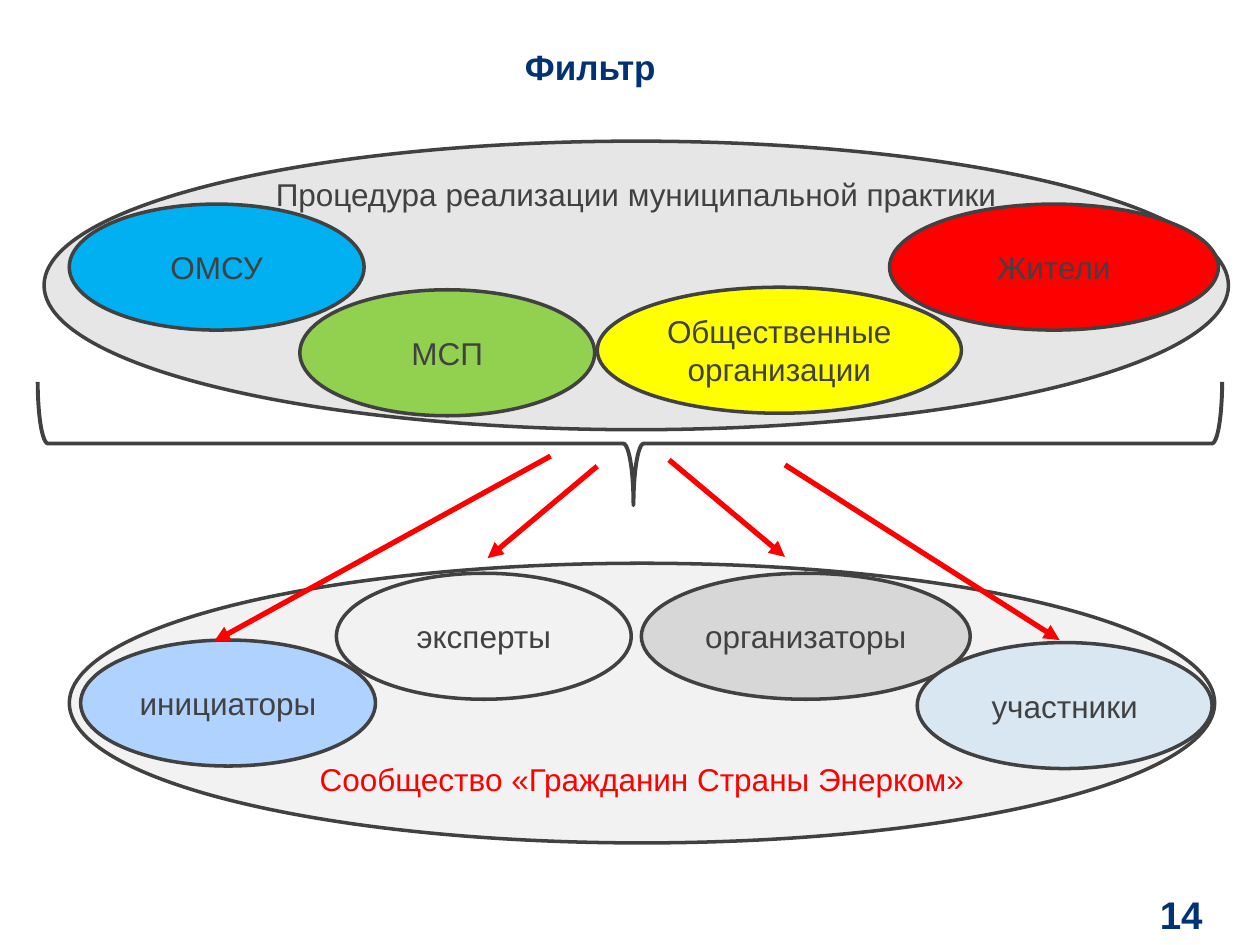
from typing import NamedTuple

from lxml import etree
from pptx import Presentation
from pptx.dml.color import RGBColor
from pptx.enum import shapes, text
from pptx.oxml import ns
from pptx.util import Inches, Pt

FONT = "Arial"
INK = RGBColor(0x41, 0x41, 0x42)
NAVY = RGBColor(0x00, 0x32, 0x74)
RED = RGBColor(0xFF, 0x00, 0x00)
GREY = RGBColor(0xE6, 0xE6, 0xE6)
PALE_GREY = RGBColor(0xF2, 0xF2, 0xF2)
MID_GREY = RGBColor(0xD7, 0xD7, 0xD7)
LIGHT_BLUE = RGBColor(0xB0, 0xD2, 0xFF)
PALE_BLUE = RGBColor(0xD8, 0xE7, 0xF2)
BLUE = RGBColor(0x00, 0xB0, 0xF0)
GREEN = RGBColor(0x92, 0xD0, 0x50)
YELLOW = RGBColor(0xFF, 0xFF, 0x00)

MIDDLE = text.MSO_ANCHOR.MIDDLE


class Oval(NamedTuple):
    label: str
    left: float
    top: float
    width: float
    fill: RGBColor
    height: float = 1
    color: RGBColor = INK
    anchor: text.MSO_ANCHOR = MIDDLE
    inset: float = 0.05


class Arrow(NamedTuple):
    x1: float
    y1: float
    x2: float
    y2: float


class Label(NamedTuple):
    words: str
    left: float
    top: float
    width: float
    height: float
    size: int


OVALS = [
    Oval("Процедура реализации муниципальной практики", 0.35, 1.12, 9.4, GREY,
         2.29, INK, text.MSO_ANCHOR.TOP, -0.07),
    Oval("Сообщество «Гражданин Страны Энерком»", 0.55, 4.47, 9.09, PALE_GREY,
         2.22, RED, text.MSO_ANCHOR.BOTTOM, 0.03),
    Oval("инициаторы", 0.64, 5.08, 2.34, LIGHT_BLUE),
    Oval("организаторы", 5.09, 4.55, 2.61, MID_GREY),
    Oval("эксперты", 2.67, 4.55, 2.34, PALE_GREY),
    Oval("участники", 7.28, 5.1, 2.34, PALE_BLUE),
    Oval("ОМСУ", 0.55, 1.62, 2.34, BLUE),
    Oval("Жители", 7.06, 1.62, 2.61, RED),
    Oval("МСП", 2.38, 2.3, 2.34, GREEN),
    Oval("Общественные организации", 4.74, 2.28, 2.89, YELLOW),
]

ARROWS = [
    Arrow(4.37, 3.62, 1.7, 5.09),
    Arrow(4.74, 3.7, 3.87, 4.43),
    Arrow(5.31, 3.65, 6.23, 4.42),
    Arrow(6.23, 3.69, 8.41, 5.08),
]

LABELS = [
    Label("Фильтр", 0.51, 0, 8.35, 1.05, 20),
    Label("14", 9.03, 7.05, 0.69, 0.41, 22),
]


def write(tf, words: str, size: int, color: RGBColor, bold: bool = False) -> None:
    tf.word_wrap = True
    p = tf.paragraphs[0]
    p.text = words
    p.alignment = text.PP_ALIGN.CENTER
    p.font.name = FONT
    p.font.size = Pt(size)
    p.font.bold = bold
    p.font.color.rgb = color


def add_oval(s, oval: Oval) -> None:
    sp = s.shapes.add_shape(
        shapes.MSO_SHAPE.OVAL, Inches(oval.left), Inches(oval.top),
        Inches(oval.width), Inches(oval.height))
    sp.shadow.inherit = False
    sp.fill.solid()
    sp.fill.fore_color.rgb = oval.fill
    sp.line.color.rgb = INK
    sp.line.width = Pt(2)
    tf = sp.text_frame
    tf.vertical_anchor = oval.anchor
    tf.margin_top = tf.margin_bottom = Inches(oval.inset)
    write(tf, oval.label, 18, oval.color)


def add_label(s, label: Label) -> None:
    sp = s.shapes.add_textbox(
        Inches(label.left), Inches(label.top),
        Inches(label.width), Inches(label.height))
    tf = sp.text_frame
    tf.margin_left = tf.margin_right = tf.margin_top = tf.margin_bottom = 0
    tf.vertical_anchor = MIDDLE
    write(tf, label.words, label.size, NAVY, bold=True)


def add_brace(s) -> None:
    sp = s.shapes.add_shape(
        shapes.MSO_SHAPE.LEFT_BRACE, Inches(4.51), Inches(-1.18),
        Inches(0.98), Inches(9.4))
    sp.rotation = 270
    sp.adjustments[0] = 0.083
    sp.adjustments[1] = 0.503
    sp.shadow.inherit = False
    sp.fill.background()
    sp.line.color.rgb = INK
    sp.line.width = Pt(2.25)


def add_arrow(s, arrow: Arrow) -> None:
    cxn = s.shapes.add_connector(
        shapes.MSO_CONNECTOR.STRAIGHT, *(Inches(v) for v in arrow))
    cxn.line.color.rgb = RED
    cxn.line.width = Pt(3)
    ln = cxn.line._get_or_add_ln()
    etree.SubElement(ln, ns.qn("a:tailEnd"), type="triangle")
    etree.SubElement(cxn._element.spPr, ns.qn("a:effectLst"))


def main() -> None:
    prs = Presentation()
    prs.slide_width, prs.slide_height = Inches(10), Inches(7.5)
    s = prs.slides.add_slide(prs.slide_layouts[6])
    for oval in OVALS:
        add_oval(s, oval)
    for label in LABELS:
        add_label(s, label)
    add_brace(s)
    for arrow in ARROWS:
        add_arrow(s, arrow)
    prs.save("out.pptx")


if __name__ == "__main__":
    main()
